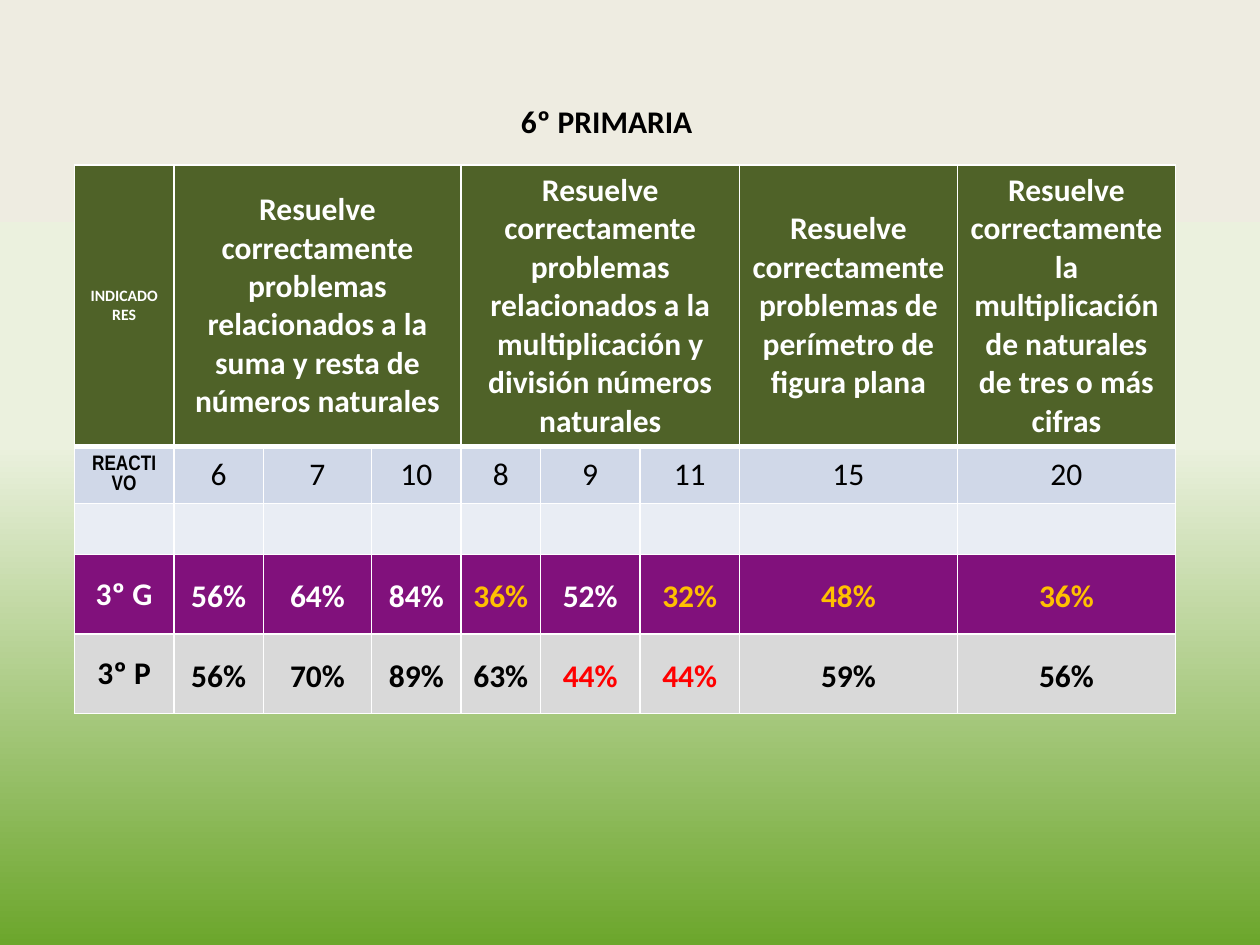
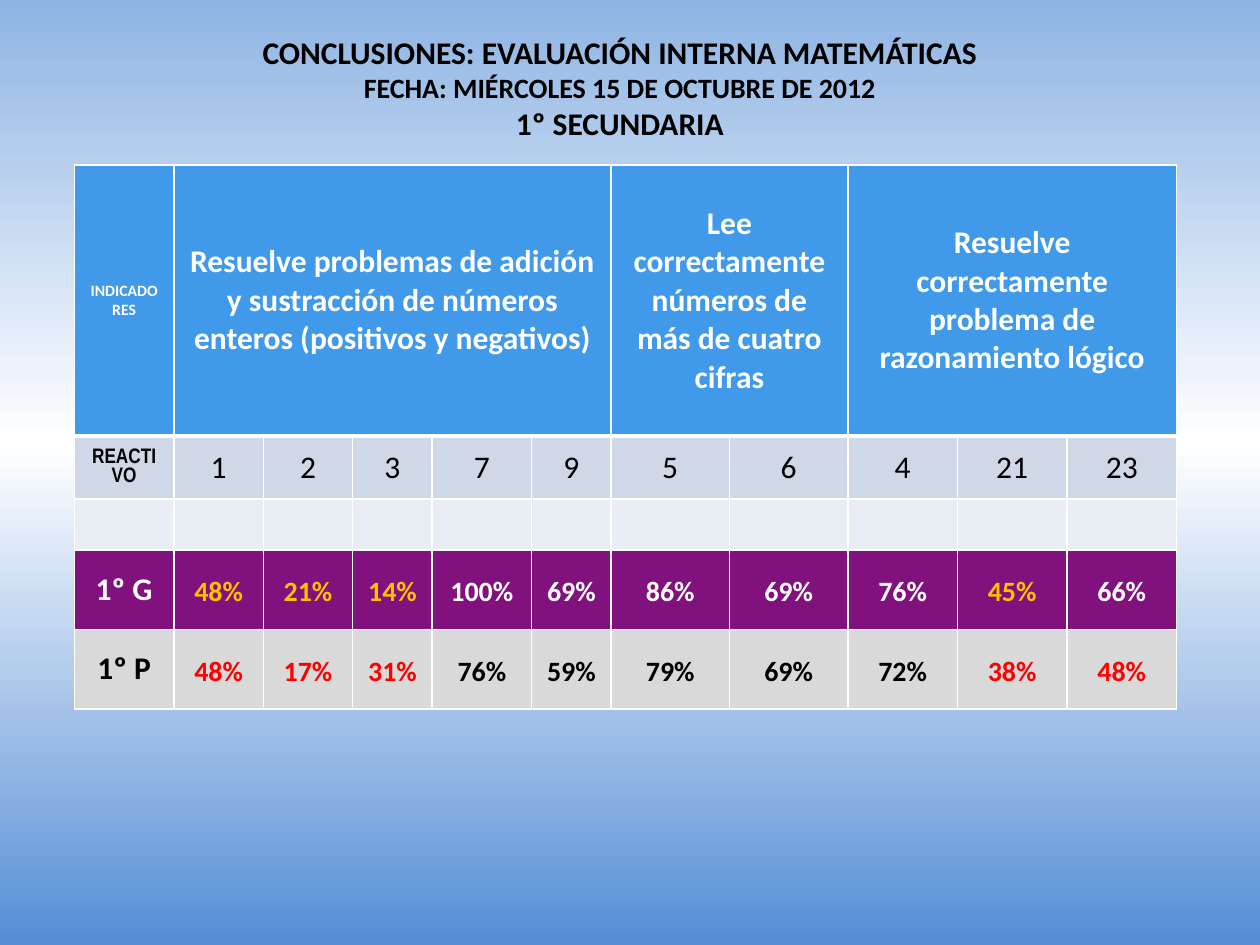
from copy import deepcopy

from pptx import Presentation
from pptx import util as u
from pptx.dml.color import RGBColor
from pptx.enum import text as t
from pptx.oxml import ns, parse_xml

# Colours
WHITE = RGBColor(0xFF, 0xFF, 0xFF)
BLACK = RGBColor(0, 0, 0)
GOLD = RGBColor(0xFF, 0xC0, 0x00)
RED = RGBColor(0xFF, 0x00, 0x00)
PURPLE = RGBColor(0x81, 0x11, 0x7C)
GREY = RGBColor(0xD9, 0xD9, 0xD9)
MIST = RGBColor(0xD0, 0xD8, 0xE8)
PALE = RGBColor(0xE9, 0xED, 0xF4)
OLIVE = RGBColor(0x4F, 0x62, 0x28)
BLUE = RGBColor(0x41, 0x99, 0xE9)
LEAF = RGBColor(0x6C, 0xA6, 0x2C)
LIME = RGBColor(0xEB, 0xF1, 0xDE)
SAND = RGBColor(0xEE, 0xEC, 0xE1)
DEEP = RGBColor(0x55, 0x8E, 0xD5)
SKY = RGBColor(0x8E, 0xB4, 0xE3)

# Content: heads hold (text, columns spanned); scores are percentages
SLIDES = [
    dict(
        title=[("6º PRIMARIA", 18)],
        box=(4, 0.76, 1.63, 0.4),
        back=(LEAF, LIME, SAND),
        band=OLIVE,
        cols=(0.79, 0.71, 0.86, 0.71, 0.63, 0.79, 0.79, 1.73, 1.73),
        rows=(2.15, 0.45, 0.39, 0.63, 0.63),
        heads=[
            ("Resuelve correctamente problemas relacionados a la suma "
             "y resta de números naturales", 3),
            ("Resuelve correctamente problemas relacionados a la "
             "multiplicación y división números naturales", 3),
            ("Resuelve correctamente problemas de perímetro de figura plana", 1),
            ("Resuelve correctamente la multiplicación de naturales "
             "de tres o más cifras", 1),
        ],
        items=(6, 7, 10, 8, 9, 11, 15, 20),
        groups=[("3º G", (56, 64, 84, 36, 52, 32, 48, 36)),
                ("3º P", (56, 70, 89, 63, 44, 44, 59, 56))],
        size=18, pad=0.06,
    ),
    dict(
        title=[("CONCLUSIONES: EVALUACIÓN INTERNA MATEMÁTICAS", 18),
               ("FECHA: MIÉRCOLES 15 DE OCTUBRE DE 2012", 16),
               ("1º SECUNDARIA", 18)],
        box=(1.93, 0.21, 5.98, 0.98),
        back=(DEEP, WHITE, SKY),
        band=BLUE,
        cols=(0.79, 0.71, 0.71, 0.63, 0.79, 0.63, 0.94, 0.94, 0.87, 0.87, 0.87),
        rows=(2.15, 0.5, 0.39, 0.63, 0.63),
        heads=[
            ("Resuelve problemas de adición y sustracción de números "
             "enteros (positivos y negativos)", 5),
            ("Lee correctamente números de más de cuatro cifras", 2),
            ("Resuelve correctamente problema de razonamiento lógico", 3),
        ],
        items=(1, 2, 3, 7, 9, 5, 6, 4, 21, 23),
        groups=[("1º G", (48, 21, 14, 100, 69, 86, 69, 76, 45, 66)),
                ("1º P", (48, 17, 31, 76, 59, 79, 69, 72, 38, 48))],
        size=16, pad=0.07,
    ),
]
LEFT, TOP = 0.59, 1.31
PASS = 50
STOPS = (0, 0.53, 1)
# Fill, plain text and low-score text of each group row
TONES = [(PURPLE, WHITE, GOLD), (GREY, BLACK, RED)]


def put(par, words, size, color, bold=True, font="Calibri"):
    """Write one centred run."""
    par.alignment = t.PP_ALIGN.CENTER
    run = par.add_run()
    run.text = words
    run.font.color.rgb = color
    look = dict(size=u.Pt(size), bold=bold, name=font)
    for key, val in look.items():
        setattr(run.font, key, val)


def paint(slide, colors):
    """Three-stop gradient that rises from the bottom edge."""
    fill = slide.background.fill
    fill.gradient()
    fill.gradient_angle = 90
    stops = slide.element.find(".//" + ns.qn("a:gsLst"))
    stops.append(deepcopy(stops[-1]))
    for stop, color, pos in zip(fill.gradient_stops, colors, STOPS):
        stop.color.rgb = color
        stop.position = pos


def head(slide, data):
    box = slide.shapes.title
    place = zip(("left", "top", "width", "height"), data["box"])
    for key, val in place:
        setattr(box, key, u.Inches(val))
    frame = box.text_frame
    look = dict(word_wrap=len(data["title"]) > 1,
                auto_size=t.MSO_AUTO_SIZE.NONE,
                vertical_anchor=t.MSO_ANCHOR.TOP)
    for key, val in look.items():
        setattr(frame, key, val)
    for i, (words, size) in enumerate(data["title"]):
        par = frame.add_paragraph() if i else frame.paragraphs[0]
        put(par, words, size, BLACK)


def edge(cell, row):
    """White borders, thick under the header row."""
    wide = {"L": 1, "R": 1, "T": 3 if row == 1 else 1, "B": 1 if row else 3}
    for side, pts in wide.items():
        cell._tc.get_or_add_tcPr().append(parse_xml(
            f'<a:ln{side} {ns.nsdecls("a")} w="{u.Pt(pts)}"><a:solidFill>'
            f'<a:srgbClr val="{WHITE}"/></a:solidFill></a:ln{side}>'))


def grid(slide, data):
    cols, rows = data["cols"], data["rows"]
    area = map(u.Inches, (LEFT, TOP, sum(cols), sum(rows)))
    table = slide.shapes.add_table(len(rows), len(cols), *area).table
    table.first_row = table.horz_banding = False
    for col, wide in zip(table.columns, cols):
        col.width = u.Inches(wide)
    for row, high in zip(table.rows, rows):
        row.height = u.Inches(high)

    # Borders and row fills
    fills = [data["band"], MIST, PALE] + [tone[0] for tone in TONES]
    for r, color in enumerate(fills):
        for cell in table.rows[r].cells:
            edge(cell, r)
            cell.fill.solid()
            cell.fill.fore_color.rgb = color
            cell.vertical_anchor = t.MSO_ANCHOR.MIDDLE

    def fit(r, c, *args, **kw):
        cell = table.cell(r, c)
        put(cell.text_frame.paragraphs[0], *args, **kw)
        return cell

    # Indicators
    first = fit(0, 0, "INDICADORES", 9, WHITE)
    first._tc.tcPr.set("vert", "wordArtVert")
    c = 1
    for words, span in data["heads"]:
        cell = fit(0, c, words, 18, WHITE)
        if span > 1:
            cell.merge(table.cell(0, c + span - 1))
        c += span

    # Item numbers
    fit(1, 0, "REACTIVO", 12, BLACK, font="Arial Narrow")
    for c, num in enumerate(data["items"], 1):
        fit(1, c, str(num), 18, BLACK, bold=False)

    # Scores of each group
    pad = u.Inches(data["pad"])
    inset = dict(margin_left=pad, margin_right=pad, margin_top=0, margin_bottom=0)
    for r, ((name, scores), tone) in enumerate(zip(data["groups"], TONES), 3):
        _, plain, low = tone
        fit(r, 0, name, 18, plain)
        for c, score in enumerate(scores, 1):
            color = low if score < PASS else plain
            cell = fit(r, c, f"{score}%", data["size"], color)
            cell.text_frame.paragraphs[0].line_spacing = 1.15
            for key, val in inset.items():
                setattr(cell, key, val)


def main():
    prs = Presentation()
    prs.slide_width, prs.slide_height = u.Inches(10), u.Inches(7.5)
    for data in SLIDES:
        slide = prs.slides.add_slide(prs.slide_layouts[5])
        paint(slide, data["back"])
        head(slide, data)
        grid(slide, data)
    prs.save("out.pptx")


if __name__ == "__main__":
    main()
